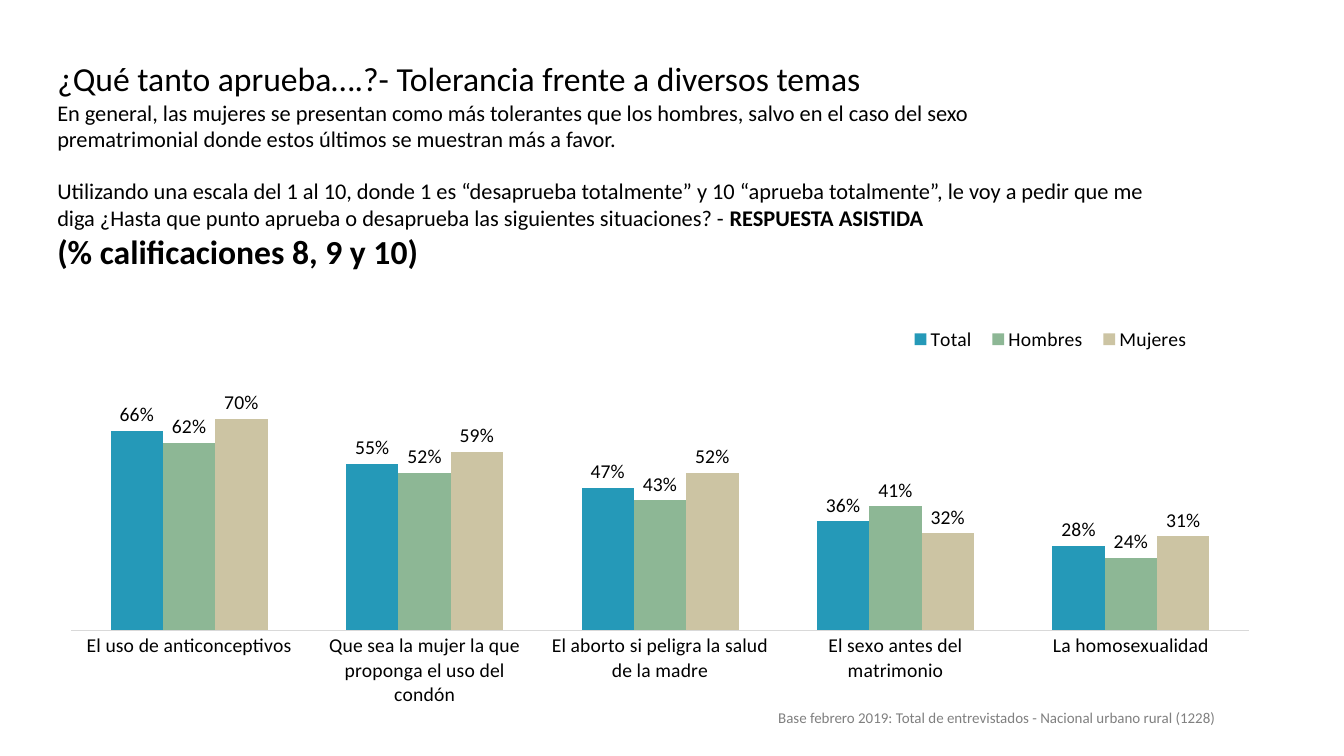
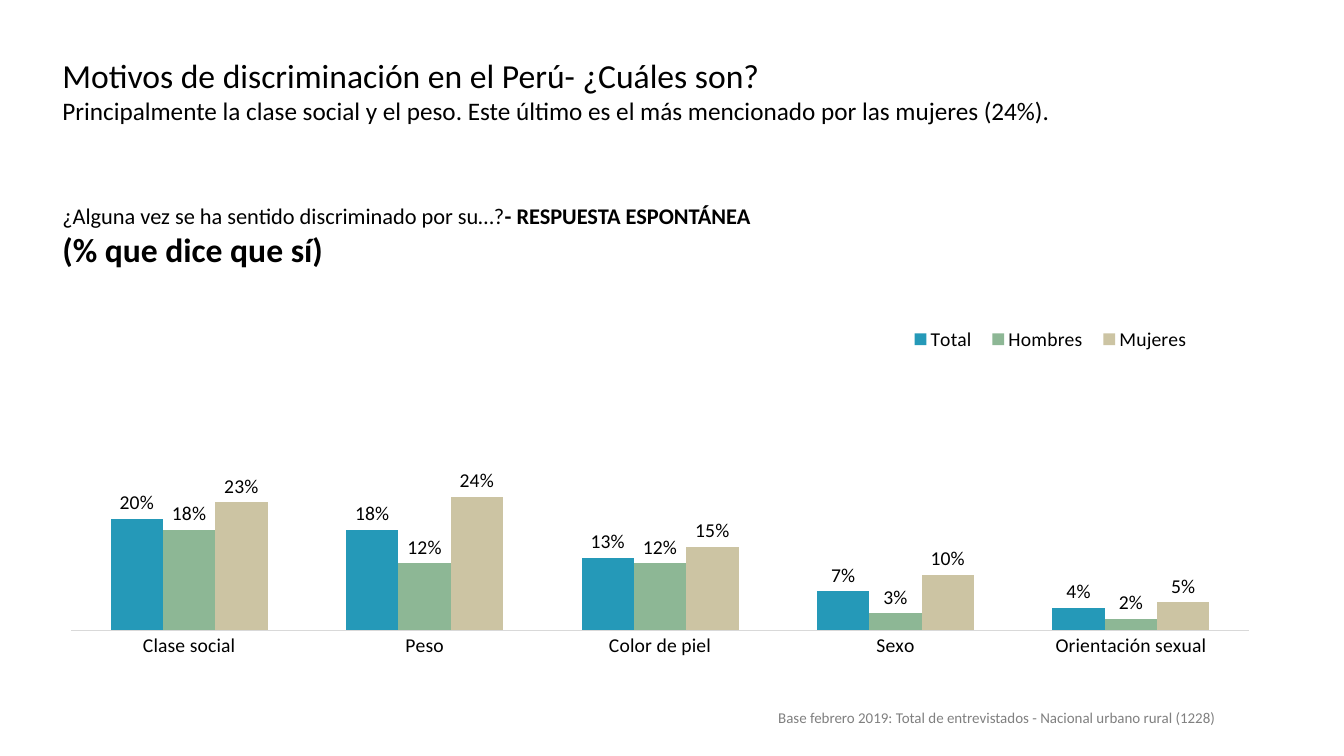
from lxml import etree
from pptx import Presentation
from pptx.chart.data import CategoryChartData
from pptx.dml.color import RGBColor
from pptx.enum.chart import XL_CHART_TYPE, XL_LABEL_POSITION, XL_LEGEND_POSITION, XL_TICK_LABEL_POSITION, XL_TICK_MARK
from pptx.enum.text import PP_ALIGN
from pptx.oxml.ns import qn
from pptx.util import Inches, Pt

FONT = "Calibri"
BLACK = RGBColor(0x00, 0x00, 0x00)
GRAY = RGBColor(0x80, 0x80, 0x80)
AXIS_GRAY = RGBColor(0xD9, 0xD9, 0xD9)
SERIES_COLORS = {
    "Total": RGBColor(0x25, 0x99, 0xB8),
    "Hombres": RGBColor(0x8D, 0xB7, 0x95),
    "Mujeres": RGBColor(0xCC, 0xC4, 0xA3),
}
FOOTER = "Base febrero 2019: Total de entrevistados - Nacional urbano rural (1228)"
PLOT_BOTTOM = 0.8

SLIDES = [
    {
        "title_box": (0.47, 0.53, 10.4, 0.91),
        "title": "¿Qué tanto aprueba….?- Tolerancia frente a diversos temas",
        "summary": "En general, las mujeres se presentan como más tolerantes que los hombres, salvo en el caso del sexo prematrimonial donde estos últimos se muestran más a favor.",
        "summary_size": 16,
        "question_box": (0.47, 1.71, 11.34, 1.04),
        "question": "Utilizando una escala del 1 al 10, donde 1 es “desaprueba totalmente” y 10 “aprueba totalmente”, le voy a pedir que me diga ¿Hasta que punto aprueba o desaprueba las siguientes situaciones? - ",
        "answer_type": "RESPUESTA ASISTIDA",
        "measure": "(% calificaciones 8, 9 y 10)",
        "categories": [
            "El uso de anticonceptivos",
            "Que sea la mujer la que proponga el uso del condón",
            "El aborto si peligra la salud de la madre",
            "El sexo antes del matrimonio",
            "La homosexualidad",
        ],
        "values": [
            (0.66, 0.55, 0.47, 0.36, 0.28),
            (0.62, 0.52, 0.43, 0.41, 0.24),
            (0.70, 0.59, 0.52, 0.32, 0.31),
        ],
        "plot_top": 0.26,
        "maximum": 0.8,
    },
    {
        "title_box": (0.52, 0.5, 10.31, 1.34),
        "title": "Motivos de discriminación en el Perú- ¿Cuáles son?",
        "summary": "Principalmente la clase social y el peso. Este último es el más mencionado por las mujeres (24%).",
        "summary_size": 18,
        "question_box": (0.52, 1.96, 11.34, 0.77),
        "question": "¿Alguna vez se ha sentido discriminado por su…?",
        "answer_type": "- RESPUESTA ESPONTÁNEA",
        "measure": "(% que dice que sí)",
        "categories": ["Clase social", "Peso", "Color de piel", "Sexo", "Orientación sexual"],
        "values": [
            (0.20, 0.18, 0.13, 0.07, 0.04),
            (0.18, 0.12, 0.12, 0.03, 0.02),
            (0.23, 0.24, 0.15, 0.10, 0.05),
        ],
        "plot_top": 0.49,
        "maximum": 0.25,
    },
]


def add_text(slide, box, paragraphs, color=BLACK):
    text_frame = slide.shapes.add_textbox(*map(Inches, box)).text_frame
    text_frame.word_wrap = True
    for index, runs in enumerate(paragraphs):
        paragraph = text_frame.paragraphs[0] if index == 0 else text_frame.add_paragraph()
        for text, size, bold in runs:
            run = paragraph.add_run()
            run.text = text
            run.font.name = FONT
            run.font.size = Pt(size)
            run.font.bold = bold
            run.font.color.rgb = color
    return text_frame


def set_layout(element, position, **settings):
    for old_layout in element.findall(qn("c:layout")):
        element.remove(old_layout)
    layout = etree.Element(qn("c:layout"))
    manual = etree.SubElement(layout, qn("c:manualLayout"))
    for name, value in settings.items():
        etree.SubElement(manual, qn(f"c:{name}")).set("val", str(value))
    element.insert(position, layout)


presentation = Presentation()
presentation.slide_width = Inches(13.33)
presentation.slide_height = Inches(7.5)

for content in SLIDES:
    slide = presentation.slides.add_slide(presentation.slide_layouts[6])

    footer = add_text(slide, (7.62, 7, 5.5, 0.26), [[(FOOTER, 10.7, False)]], GRAY)
    footer.paragraphs[0].alignment = PP_ALIGN.JUSTIFY
    footer.paragraphs[0].line_spacing = 0.9

    add_text(slide, content["title_box"], [
        [(content["title"], 24, False)],
        [(content["summary"], content["summary_size"], False)],
    ])
    add_text(slide, content["question_box"], [
        [(content["question"], 16, False), (content["answer_type"], 16, True)],
        [(content["measure"], 24, True)],
    ])

    chart_data = CategoryChartData(number_format="0%")
    chart_data.categories = content["categories"]
    for name, values in zip(SERIES_COLORS, content["values"]):
        chart_data.add_series(name, values)
    chart = slide.shapes.add_chart(
        XL_CHART_TYPE.COLUMN_CLUSTERED,
        Inches(0.47), Inches(2.7), Inches(11.92), Inches(4.44), chart_data,
    ).chart
    chart.has_title = False
    chart.font.name = FONT
    chart.font.size = Pt(14)
    chart.font.color.rgb = BLACK

    plot = chart.plots[0]
    plot.gap_width = 150
    plot.overlap = 0
    plot.vary_by_categories = False
    for series in plot.series:
        series.format.fill.solid()
        series.format.fill.fore_color.rgb = SERIES_COLORS[series.name]
        series.invert_if_negative = False
    plot.has_data_labels = True
    labels = plot.data_labels
    labels.show_value = True
    labels.number_format = "0%"
    labels.number_format_is_linked = False
    labels.position = XL_LABEL_POSITION.OUTSIDE_END
    labels.font.name = FONT
    labels.font.size = Pt(14)
    labels.font.color.rgb = BLACK

    category_axis = chart.category_axis
    category_axis.major_tick_mark = XL_TICK_MARK.NONE
    category_axis.format.line.color.rgb = AXIS_GRAY
    category_axis.format.line.width = Pt(0.75)

    value_axis = chart.value_axis
    value_axis.minimum_scale = 0
    value_axis.maximum_scale = content["maximum"]
    value_axis.has_major_gridlines = False
    value_axis.major_tick_mark = XL_TICK_MARK.NONE
    value_axis.tick_label_position = XL_TICK_LABEL_POSITION.NONE
    value_axis.format.line.fill.background()

    chart.has_legend = True
    chart.legend.position = XL_LEGEND_POSITION.TOP
    chart.legend.include_in_layout = False
    chart_element = chart._chartSpace.find(qn("c:chart"))
    set_layout(chart_element.find(qn("c:legend")), 1,
               xMode="edge", yMode="edge", x=0.71, y=0.12, w=0.25, h=0.06)
    set_layout(chart_element.find(qn("c:plotArea")), 0,
               layoutTarget="inner", xMode="edge", yMode="edge", x=0.02, y=content["plot_top"],
               w=0.98, h=round(PLOT_BOTTOM - content["plot_top"], 2))

presentation.save("out.pptx")
